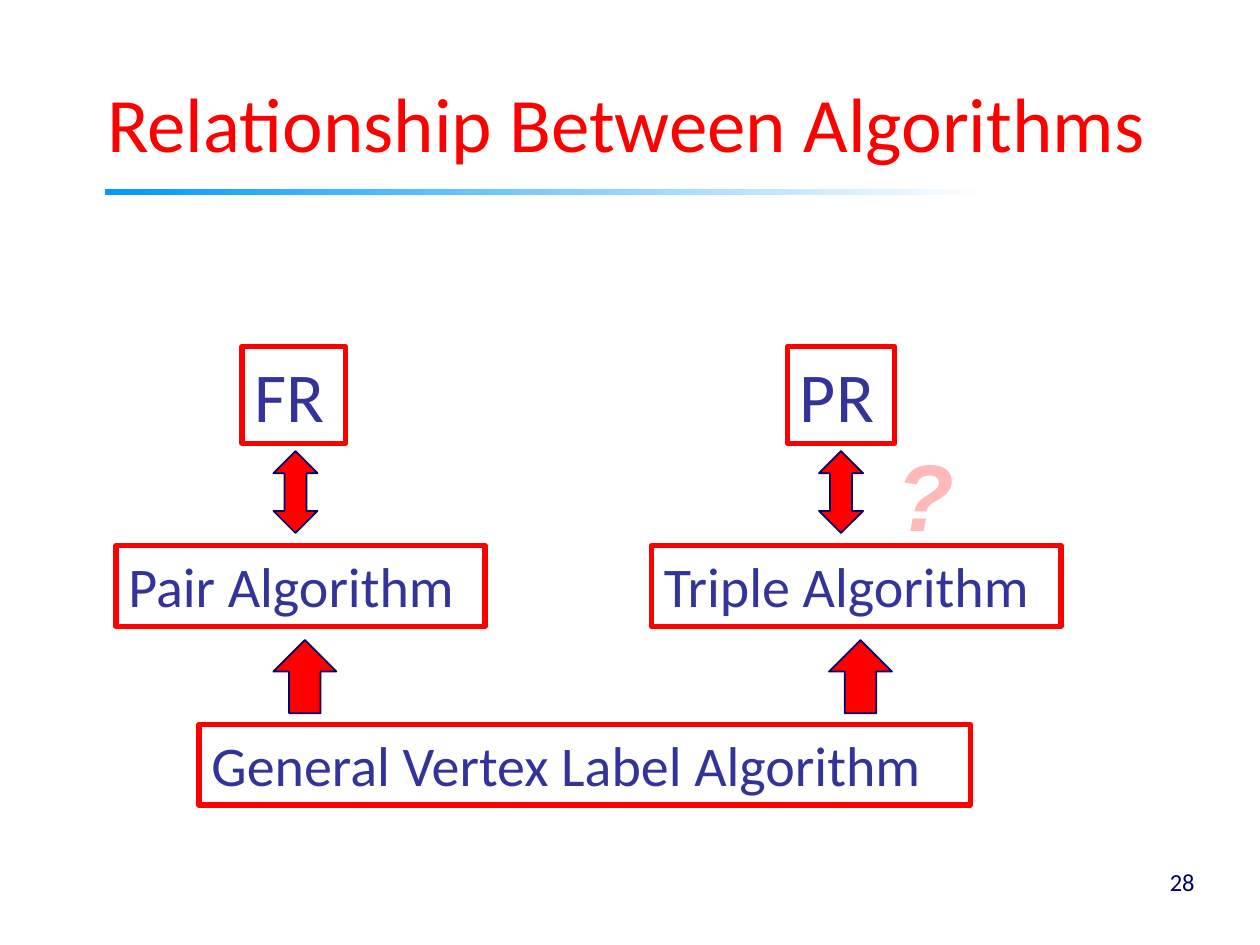
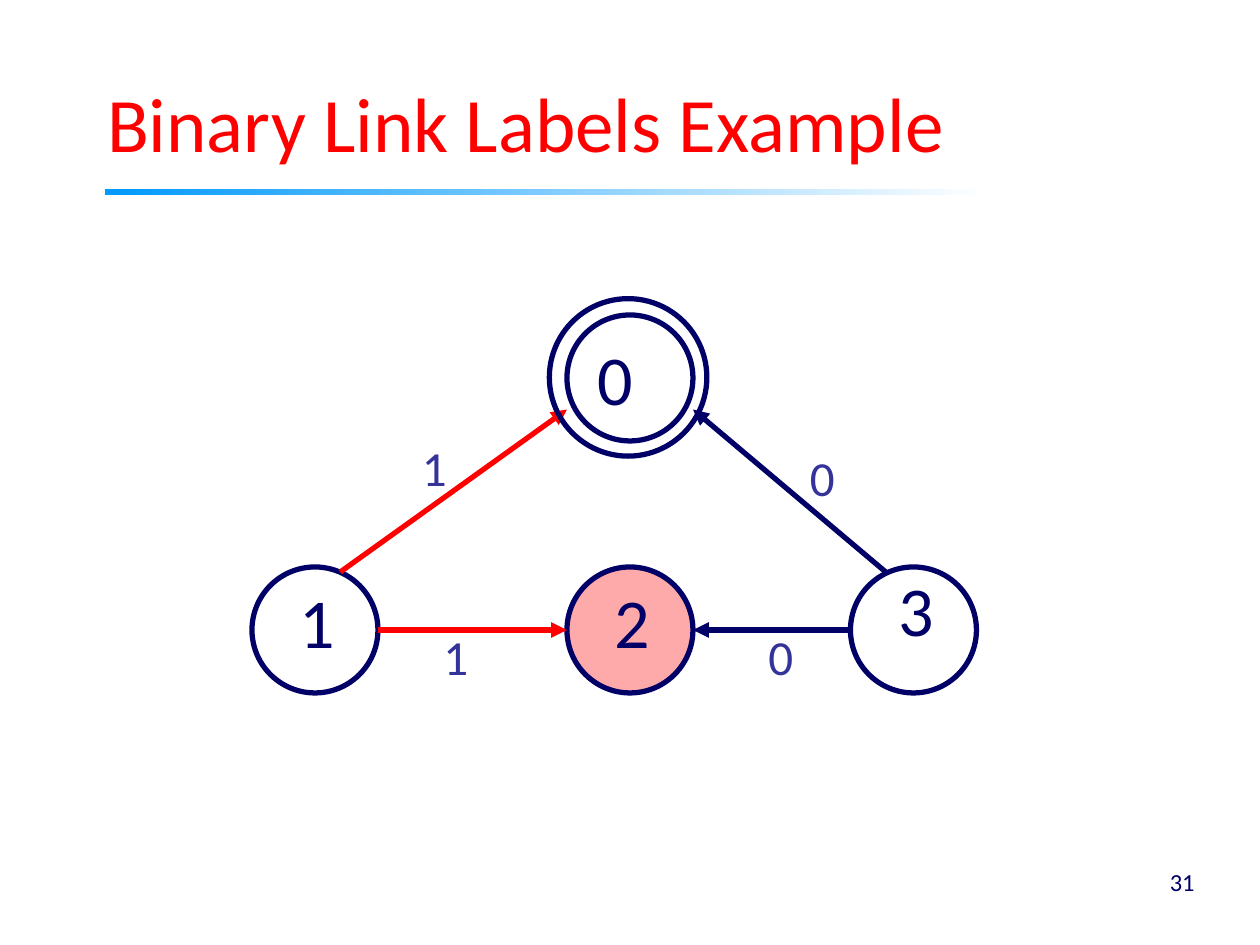
from dataclasses import dataclass

from lxml import etree
from pptx import Presentation
from pptx.dml.color import RGBColor
from pptx.enum import shapes, text
from pptx.oxml import ns
from pptx.util import Inches, Pt

# Shared style
FONT = "Calibri"
RED, NAVY, INDIGO = "FF0000", "000066", "333399"
PINK, SALMON, SKY, WHITE = "FFB9B9", "FFAAAA", "0099FF", "FFFFFF"
SHAPE = shapes.MSO_SHAPE
ANCHOR = text.MSO_ANCHOR
ALIGN = text.PP_ALIGN


@dataclass
class Label:
    words: str
    left: float
    top: float
    width: float
    height: float
    size: int
    color: str = INDIGO
    align: ALIGN = ALIGN.LEFT
    anchor: ANCHOR = ANCHOR.TOP
    font: str = FONT
    emphasis: bool = False


@dataclass
class Figure:
    kind: SHAPE
    left: float
    top: float
    width: float
    height: float
    line: str = NAVY
    weight: float = 3
    fill: str | None = None
    rotation: float = 0


@dataclass
class Arrow:
    start: tuple[float, float]
    end: tuple[float, float]
    color: str


def rgb(color: str) -> RGBColor:
    return RGBColor.from_string(color)


def box(item) -> list:
    return [Inches(v) for v in (item.left, item.top, item.width, item.height)]


def write(sp, label: Label) -> None:
    tf = sp.text_frame
    tf.word_wrap = True
    tf.auto_size = text.MSO_AUTO_SIZE.NONE
    tf.vertical_anchor = label.anchor
    tf.margin_left = tf.margin_right = Inches(0.1)
    tf.margin_top = tf.margin_bottom = Inches(0.05)
    p = tf.paragraphs[0]
    p.alignment = label.align
    r = p.add_run()
    r.text = label.words
    r.font.name = label.font
    r.font.size = Pt(label.size)
    r.font.bold = r.font.italic = label.emphasis
    r.font.color.rgb = rgb(label.color)


def add_label(s, label: Label) -> None:
    write(s.shapes.add_textbox(*box(label)), label)


def add_figure(s, figure: Figure):
    sp = s.shapes.add_shape(figure.kind, *box(figure))
    sp.shadow.inherit = False
    sp.rotation = figure.rotation
    sp.line.color.rgb = rgb(figure.line)
    sp.line.width = Pt(figure.weight)
    if figure.fill:
        sp.fill.solid()
        sp.fill.fore_color.rgb = rgb(figure.fill)
    else:
        sp.fill.background()
    return sp


def add_framed(s, label: Label, kind: SHAPE, line: str) -> None:
    write(add_figure(s, Figure(kind, label.left, label.top, label.width, label.height, line)), label)


def add_arrow(s, arrow: Arrow) -> None:
    ends = [Inches(v) for v in (*arrow.start, *arrow.end)]
    sp = s.shapes.add_connector(shapes.MSO_CONNECTOR.STRAIGHT, *ends)
    sp.line.color.rgb = rgb(arrow.color)
    sp.line.width = Pt(3)
    etree.SubElement(sp.line._get_or_add_ln(), ns.qn("a:tailEnd"), type="triangle")
    etree.SubElement(sp._element.spPr, ns.qn("a:effectLst"))


def new_slide(prs, title: str, number: int):
    s = prs.slides.add_slide(prs.slide_layouts[5])

    # Fading rule under the title
    rule = s.shapes.add_shape(SHAPE.RECTANGLE, Inches(0.83), Inches(1.5), Inches(7), Inches(0.05))
    rule.shadow.inherit = False
    rule.line.fill.background()
    rule.fill.gradient()
    rule.fill.gradient_angle = 0
    for stop, color in zip(rule.fill.gradient_stops, (SKY, WHITE)):
        stop.color.rgb = rgb(color)

    # Title and slide number
    heading = Label(title, 0.75, 0.17, 8.5, 1.21, 44, RED, anchor=ANCHOR.BOTTOM)
    sp = s.shapes.title
    sp.left, sp.top, sp.width, sp.height = box(heading)
    write(sp, heading)
    add_label(s, Label(str(number), 7.5, 6.75, 2.08, 0.5, 14, NAVY, ALIGN.RIGHT, ANCHOR.MIDDLE))
    return s


def relationship_slide(prs) -> None:
    s = new_slide(prs, "Relationship Between Algorithms", 28)

    # Algorithm boxes
    for label in (
        Label("FR", 1.92, 2.75, 0.82, 0.77, 40),
        Label("PR", 6.25, 2.75, 0.85, 0.77, 40),
        Label("Pair Algorithm", 0.92, 4.33, 2.93, 0.64, 32),
        Label("Triple Algorithm", 5.17, 4.33, 3.25, 0.64, 32),
        Label("General Vertex Label Algorithm", 1.58, 5.75, 6.12, 0.64, 32),
    ):
        add_framed(s, label, SHAPE.RECTANGLE, RED)

    # Block arrows between the levels
    for left in (2.17, 6.58):
        add_figure(s, Figure(SHAPE.UP_ARROW, left, 5.08, 0.5, 0.58, NAVY, 1, RED))
    for left in (2.02, 6.35):
        add_figure(s, Figure(SHAPE.LEFT_RIGHT_ARROW, left, 3.73, 0.65, 0.35, NAVY, 1, RED, 270))

    # Open question
    add_label(s, Label("?", 6.92, 3.42, 0.85, 1.01, 54, PINK, ALIGN.CENTER,
                       font="Arial", emphasis=True))


def link_labels_slide(prs) -> None:
    s = new_slide(prs, "Binary Link Labels Example", 31)

    # Nodes, with a double ring around the root
    add_framed(s, Label("0", 4.5, 2.5, 1, 1, 40, NAVY, anchor=ANCHOR.MIDDLE), SHAPE.OVAL, NAVY)
    for left, fill in ((4.5, SALMON), (2, None), (6.75, None)):
        add_figure(s, Figure(SHAPE.OVAL, left, 4.5, 1, 1, fill=fill))
    for digit, left, top in (("1", 2.28, 4.54), ("2", 4.78, 4.54), ("3", 7.03, 4.45)):
        add_label(s, Label(digit, left, top, 0.47, 0.77, 40, NAVY))

    # Links
    for arrow in (
        Arrow((7.03, 4.54), (5.5, 3.25), NAVY),
        Arrow((2.7, 4.54), (4.5, 3.25), RED),
        Arrow((3, 5), (4.5, 5), RED),
        Arrow((6.75, 5), (5.5, 5), NAVY),
    ):
        add_arrow(s, arrow)
    add_figure(s, Figure(SHAPE.OVAL, 4.36, 2.37, 1.25, 1.25))

    # Link labels
    for digit, left, top in (("0", 6, 4.92), ("0", 6.33, 3.5), ("1", 3.42, 4.92), ("1", 3.25, 3.42)):
        add_label(s, Label(digit, left, top, 0.42, 0.57, 28))


def main() -> None:
    prs = Presentation()
    prs.slide_width, prs.slide_height = Inches(10), Inches(7.5)
    relationship_slide(prs)
    link_labels_slide(prs)
    prs.save("out.pptx")


if __name__ == "__main__":
    main()
